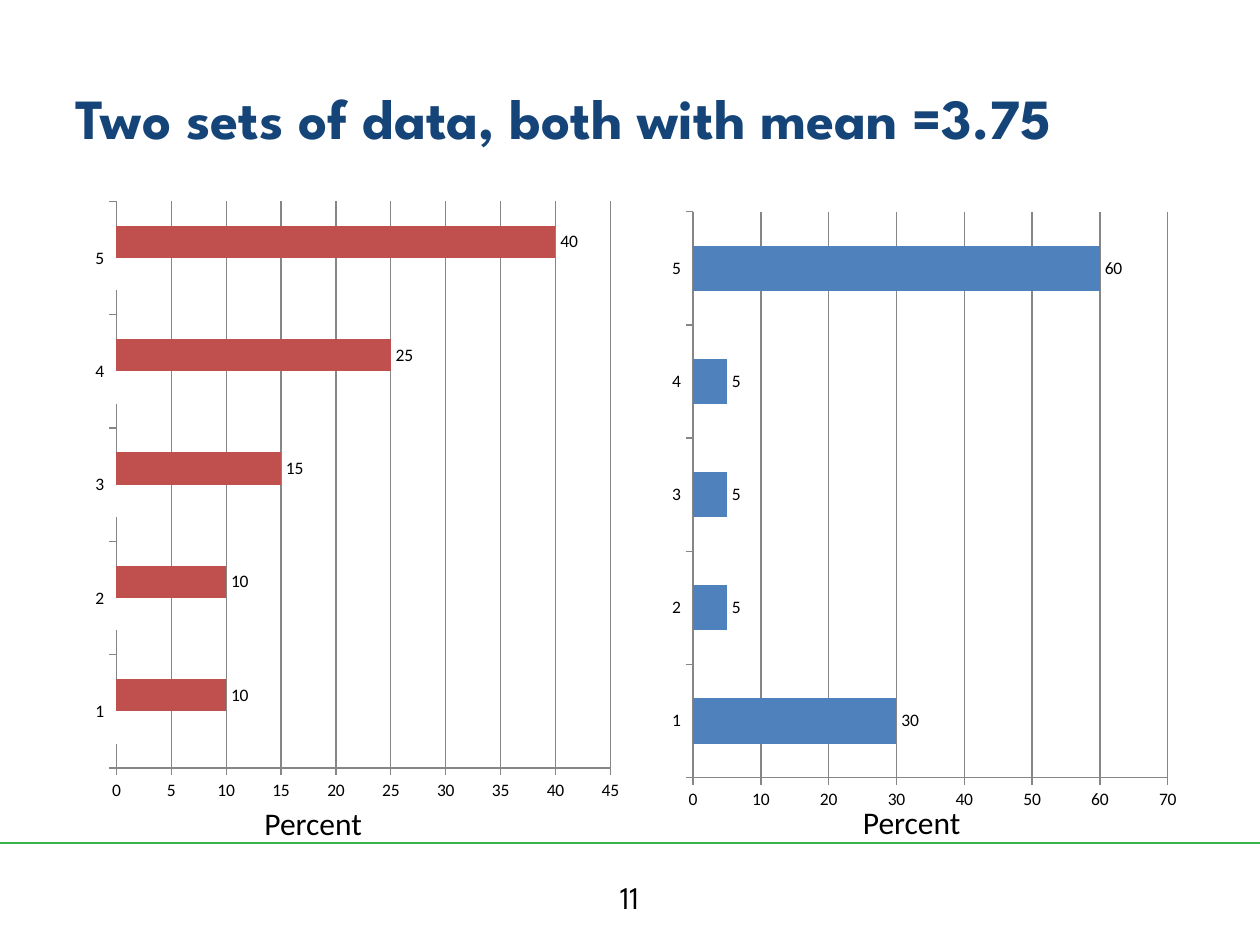
from lxml.etree import SubElement
from pptx import Presentation
from pptx.chart.data import CategoryChartData
from pptx.dml.color import RGBColor
from pptx.enum.chart import XL_CHART_TYPE, XL_LABEL_POSITION, XL_TICK_MARK
from pptx.enum.shapes import MSO_CONNECTOR
from pptx.enum.text import MSO_ANCHOR, PP_ALIGN
from pptx.oxml.ns import qn
from pptx.util import Inches, Pt

theme = {
    "head": {"name": "League Spartan", "size": Pt(32.4), "bold": True, "color": "154578"},
    "page": {"name": "League Spartan", "size": Pt(18), "bold": False, "color": "000000"},
    "unit": {"name": "Calibri", "size": Pt(18), "bold": False, "color": "000000"},
    "chart": {"name": "Calibri", "size": Pt(10), "bold": False, "color": "000000"},
    "rule": "39B54A", "axis": "868686",
    "white": "FFFFFF", "red": "C0504D", "blue": "4F81BD",
}

deck = Presentation()
deck.slide_width, deck.slide_height = Inches(10), Inches(7.5)
slide = deck.slides.add_slide(deck.slide_layouts[5])
shapes = slide.shapes


def place(*box):
    """Turn percent shares of the slide into lengths."""
    sides = (deck.slide_width, deck.slide_height) * 2
    return [int(side * share / 100) for side, share in zip(sides, box)]


def style(font, form):
    for key, value in form.items():
        if key == "color":
            font.color.rgb = RGBColor.from_string(value)
        else:
            setattr(font, key, value)


# Footer rule
rule = shapes.add_connector(MSO_CONNECTOR.STRAIGHT, *place(0, 89.2, 100, 89.2))
rule.line.color.rgb = RGBColor.from_string(theme["rule"])
rule.line.width = Pt(1.5)
SubElement(rule._element.spPr, qn("a:effectLst"))

# Title
title = shapes.title
title.left, title.top, title.width, title.height = place(5, 4, 90, 16.67)
title.text_frame.text = "Two sets of data, both with mean =3.75"
title.text_frame.vertical_anchor = MSO_ANCHOR.MIDDLE
line = title.text_frame.paragraphs[0]
line.alignment = PP_ALIGN.LEFT
style(line.runs[0].font, theme["head"])

# Bar charts: box, axis top, axis step, series as (values, colour, labelled)
plots = [
    ((6.7, 20, 43.3, 66), 45, 5,
     [((5, 4, 3, 2, 1), "white", False), ((10, 10, 15, 25, 40), "red", True)]),
    ((52.5, 21.1, 41.7, 65.9), 70, 10,
     [((30, 5, 5, 5, 60), "blue", True)]),
]
for box, top, step, rows in plots:
    data = CategoryChartData()
    data.categories = ["1", "2", "3", "4", "5"]
    for num, row in enumerate(rows, 1):
        data.add_series(f"Series {num}", row[0])
    chart = shapes.add_chart(XL_CHART_TYPE.BAR_CLUSTERED, *place(*box), data).chart
    chart.has_legend = chart.has_title = False
    style(chart.font, theme["chart"])
    plot = chart.plots[0]
    plot.gap_width, plot.overlap, plot.vary_by_categories = 150, 0, False

    for bar, (_, hue, shown) in zip(plot.series, rows):
        bar.format.fill.solid()
        bar.format.fill.fore_color.rgb = RGBColor.from_string(theme[hue])
        bar.invert_if_negative = False
        if shown:
            bar.data_labels.show_value = True
            bar.data_labels.position = XL_LABEL_POSITION.OUTSIDE_END

    scale = chart.value_axis
    limits = {"minimum_scale": 0, "maximum_scale": top, "major_unit": step,
              "has_major_gridlines": True}
    for key, value in limits.items():
        setattr(scale, key, value)
    for axis in (chart.category_axis, scale):
        axis.major_tick_mark = XL_TICK_MARK.OUTSIDE
        axis.minor_tick_mark = XL_TICK_MARK.NONE
    for part in (chart.category_axis, scale, scale.major_gridlines):
        part.format.line.color.rgb = RGBColor.from_string(theme["axis"])
        part.format.line.width = Pt(0.75)

# Axis captions and page number
notes = [
    ("Percent", (20, 84.4, 14.2, 5.4), "unit", PP_ALIGN.LEFT),
    ("Percent", (67.5, 84.3, 14.2, 5.4), "unit", PP_ALIGN.LEFT),
    ("11", (38.3, 92.3, 23.3, 5.3), "page", PP_ALIGN.CENTER),
]
for words, box, kind, align in notes:
    frame = shapes.add_textbox(*place(*box)).text_frame
    frame.word_wrap = True
    frame.text = words
    frame.paragraphs[0].alignment = align
    style(frame.paragraphs[0].runs[0].font, theme[kind])

deck.save("out.pptx")
